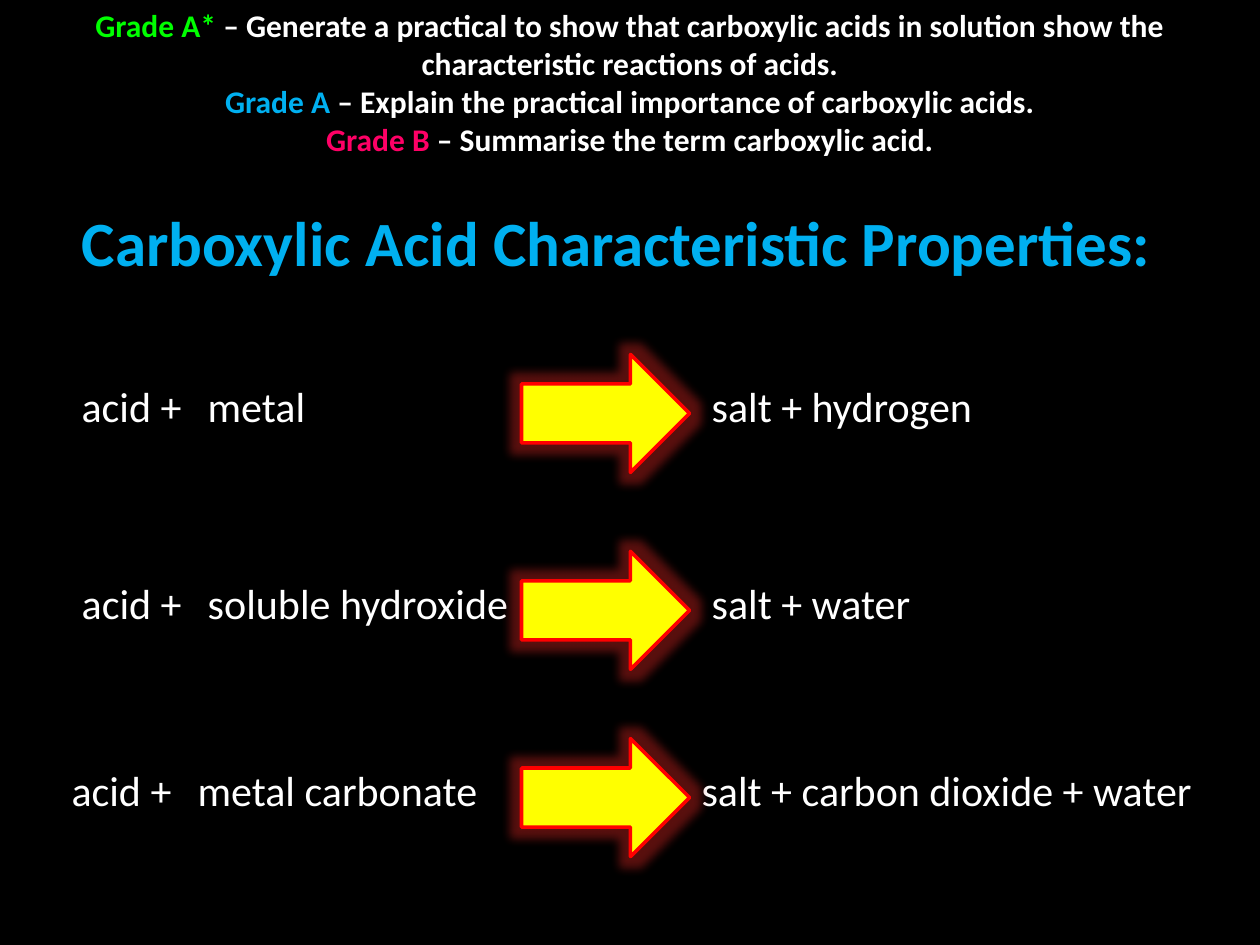
from lxml.etree import SubElement
from pptx import Presentation
from pptx.dml.color import RGBColor
from pptx.enum.shapes import MSO_SHAPE as Shape
from pptx.enum.text import MSO_ANCHOR as Anchor, MSO_AUTO_SIZE as AutoSize, PP_ALIGN as Align
from pptx.oxml.ns import qn
from pptx.util import Pt

COLOURS = {
    "black": "000000", "white": "FFFFFF", "green": "00FF00", "blue": "00B0F0",
    "pink": "FF0066", "yellow": "FFFF00", "red": "FF0000", "glow": "E02824",
}


def colour(name):
    return RGBColor.from_string(COLOURS[name])


def write(box, paragraphs, size=24, bold=False, align=Align.LEFT, tabs=()):
    """Fill a box with paragraphs, each a list of (text, colour name) spans."""
    frame = box.text_frame
    frame.word_wrap = True
    frame.auto_size = AutoSize.SHAPE_TO_FIT_TEXT
    frame.vertical_anchor = Anchor.TOP
    for index, spans in enumerate(paragraphs):
        para = frame.add_paragraph() if index else frame.paragraphs[0]
        para.alignment = align
        if tabs:
            stops = SubElement(para._p.get_or_add_pPr(), qn("a:tabLst"))
            for stop in tabs:
                SubElement(stops, qn("a:tab"), pos=str(Pt(stop)), algn="l")
        for text, name in spans:
            span = para.add_run()
            span.text = text
            span.font.name = "Calibri"
            span.font.size = Pt(size)
            span.font.bold = bold
            span.font.color.rgb = colour(name)


# Page
deck = Presentation()
deck.slide_width, deck.slide_height = Pt(720), Pt(540)
page = deck.slides.add_slide(deck.slide_layouts[5])
page.background.fill.solid()
page.background.fill.fore_color.rgb = colour("black")

# Title
title = page.shapes.title
title.left, title.top, title.width, title.height = Pt(39.6), Pt(112.5), Pt(680.4), Pt(51)
write(title, [[("Carboxylic Acid Characteristic Properties:", "blue")]], size=36, bold=True)

# Graded objectives
objectives = [
    ("Grade A* ", "green", "– Generate a practical to show that carboxylic acids in solution "
                           "show the characteristic reactions of acids."),
    ("Grade A ", "blue", "– Explain the practical importance of carboxylic acids."),
    ("Grade B ", "pink", "– Summarise the term carboxylic acid."),
]
header = page.shapes.add_textbox(0, 0, Pt(720), Pt(94.5))
write(header, [[(grade, name), (task, "white")] for grade, name, task in objectives],
      size=18, bold=True, align=Align.CENTER)

# Reactions: left, top and width of the text, top of the arrow
reactions = [
    ("metal", "salt + hydrogen", 39.6, 213.8, 568, 202.5),
    ("soluble hydroxide", "salt + water", 39.6, 326.2, 680.4, 315),
    ("metal carbonate", "salt + carbon dioxide + water", 33.8, 433.1, 658, 422),
]
for reactant, products, left, top, width, arrow_top in reactions:
    equation = page.shapes.add_textbox(Pt(left), Pt(top), Pt(width), Pt(36))
    write(equation, [[(f"acid +\t{reactant}\t{products}", "white")]], tabs=(72, 360))

    arrow = page.shapes.add_shape(Shape.RIGHT_ARROW, Pt(298), Pt(arrow_top), Pt(96), Pt(67.5))
    arrow.fill.solid()
    arrow.fill.fore_color.rgb = colour("yellow")
    arrow.line.color.rgb = colour("red")
    arrow.line.width = Pt(2)
    arrow.shadow.inherit = False
    effects = arrow._element.spPr.find(qn("a:effectLst"))
    glow = SubElement(effects, qn("a:glow"), rad=str(Pt(11)))
    tint = SubElement(glow, qn("a:srgbClr"), val=COLOURS["glow"])
    SubElement(tint, qn("a:alpha"), val="40000")

deck.save("out.pptx")
